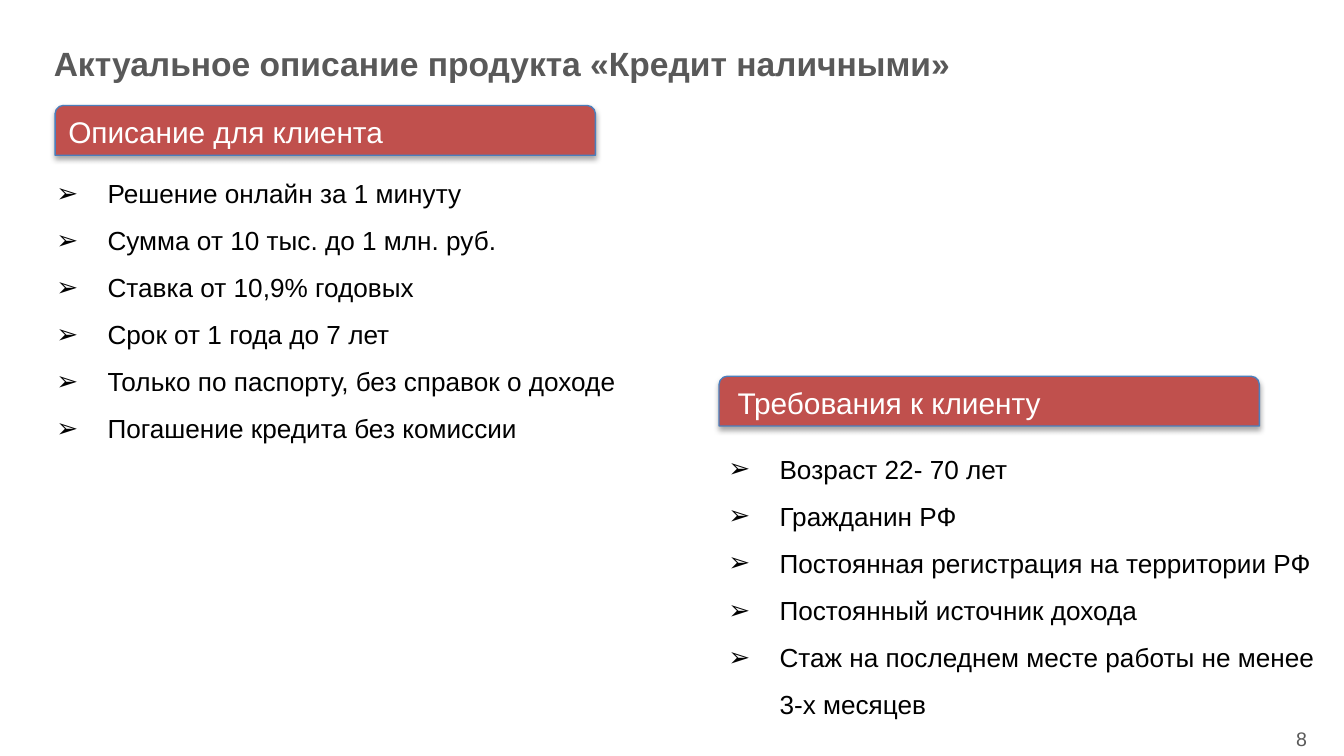
from lxml.etree import SubElement
from pptx import Presentation
from pptx.dml.color import RGBColor
from pptx.enum.shapes import MSO_SHAPE as Shape
from pptx.enum.text import MSO_ANCHOR as Anchor, MSO_AUTO_SIZE as AutoSize, PP_ALIGN as Align
from pptx.oxml.ns import qn
from pptx.util import Inches, Pt

GRAY, RED, BLUE, WHITE, BLACK = "595959", "C0504D", "4B7EBC", "FFFFFF", "000000"

presentation = Presentation()
presentation.slide_width = Inches(10)
presentation.slide_height = presentation.slide_width * 9 // 16
column = presentation.slide_width / 100
row = presentation.slide_height / 56.25
slide = presentation.slides.add_slide(presentation.slide_layouts[3])
title, left_list, right_list = slide.placeholders


def cells(left, top, width, height):
    return [int(left * column), int(top * row), int(width * column), int(height * row)]


def write(shape, lines, color, font_format, paragraph_format, anchor=Anchor.TOP):
    frame = shape.text_frame
    frame.word_wrap, frame.auto_size, frame.vertical_anchor = True, AutoSize.NONE, anchor
    frame.text = "\n".join(lines)
    for paragraph in frame.paragraphs:
        for name, value in paragraph_format.items():
            setattr(paragraph, name, value)
        for run in paragraph.runs:
            run.font.color.rgb = RGBColor.from_string(color)
            for name, value in font_format.items():
                setattr(run.font, name, value)


title_font = {"name": "Arial", "size": Pt(18), "bold": True}
heading_font = {"name": "Arial", "size": Pt(16)}
list_font = {"name": "Arial", "size": Pt(14)}
number_font = {"name": "Arial", "size": Pt(10.5)}
list_format = {"level": 1, "line_spacing": 1.5, "space_before": Pt(0), "alignment": Align.LEFT}

title.left, title.top, title.width, title.height = cells(3, 2.75, 83.8, 3.9)
write(title, ["Актуальное описание продукта «Кредит наличными»"], GRAY,
      title_font, {"alignment": Align.LEFT}, Anchor.MIDDLE)

sections = [
    ("Описание для клиента", (4.1, 7.85), (4.1, 8), left_list, (-1.8, 11.55, 65.3, 22.2), [
        "Решение онлайн за 1 минуту",
        "Сумма от 10 тыс. до 1 млн. руб.",
        "Ставка от 10,9% годовых",
        "Срок от 1 года до 7 лет",
        "Только по паспорту, без справок о доходе",
        "Погашение кредита без комиссии",
    ]),
    ("Требования к клиенту", (53.5, 28), (53.9, 28.1), right_list, (48.2, 32.05, 50.9, 22.2), [
        "Возраст 22- 70 лет",
        "Гражданин РФ",
        "Постоянная регистрация на территории РФ",
        "Постоянный источник дохода",
        "Стаж на последнем месте работы не менее 3-х месяцев",
    ]),
]

for heading, banner_corner, heading_corner, body, body_cells, items in sections:
    banner = slide.shapes.add_shape(Shape.ROUND_2_SAME_RECTANGLE, *cells(*banner_corner, 40.2, 3.7))
    banner.fill.solid()
    banner.fill.fore_color.rgb = RGBColor.from_string(RED)
    banner.line.color.rgb = RGBColor.from_string(BLUE)
    banner.line.width = Pt(0.75)
    banner.shadow.inherit = False
    effects = banner.element.spPr.find(qn("a:effectLst"))
    shadow = SubElement(effects, qn("a:outerShdw"), blurRad=str(Pt(3.1)), dist=str(Pt(1.8)),
                        dir="5400000", rotWithShape="0")
    shadow_color = SubElement(shadow, qn("a:srgbClr"), val=BLACK)
    SubElement(shadow_color, qn("a:alpha"), val="35000")

    label = slide.shapes.add_textbox(*cells(*heading_corner, 37.2, 3.7))
    write(label, [heading], WHITE, heading_font, {})

    body.left, body.top, body.width, body.height = cells(*body_cells)
    write(body, items, BLACK, list_font, list_format)
    for paragraph in body.text_frame.paragraphs:
        properties = paragraph._p.get_or_add_pPr()
        properties.set("marL", str(Inches(0.88)))
        properties.set("indent", str(Inches(-0.38)))
        SubElement(properties, qn("a:buFont"), typeface="Arial")
        SubElement(properties, qn("a:buChar"), char="➢")

number = slide.shapes.add_textbox(*cells(94.2, 53.6, 5.3, 2.8))
write(number, ["8"], GRAY, number_font, {"alignment": Align.CENTER})

presentation.save("out.pptx")
